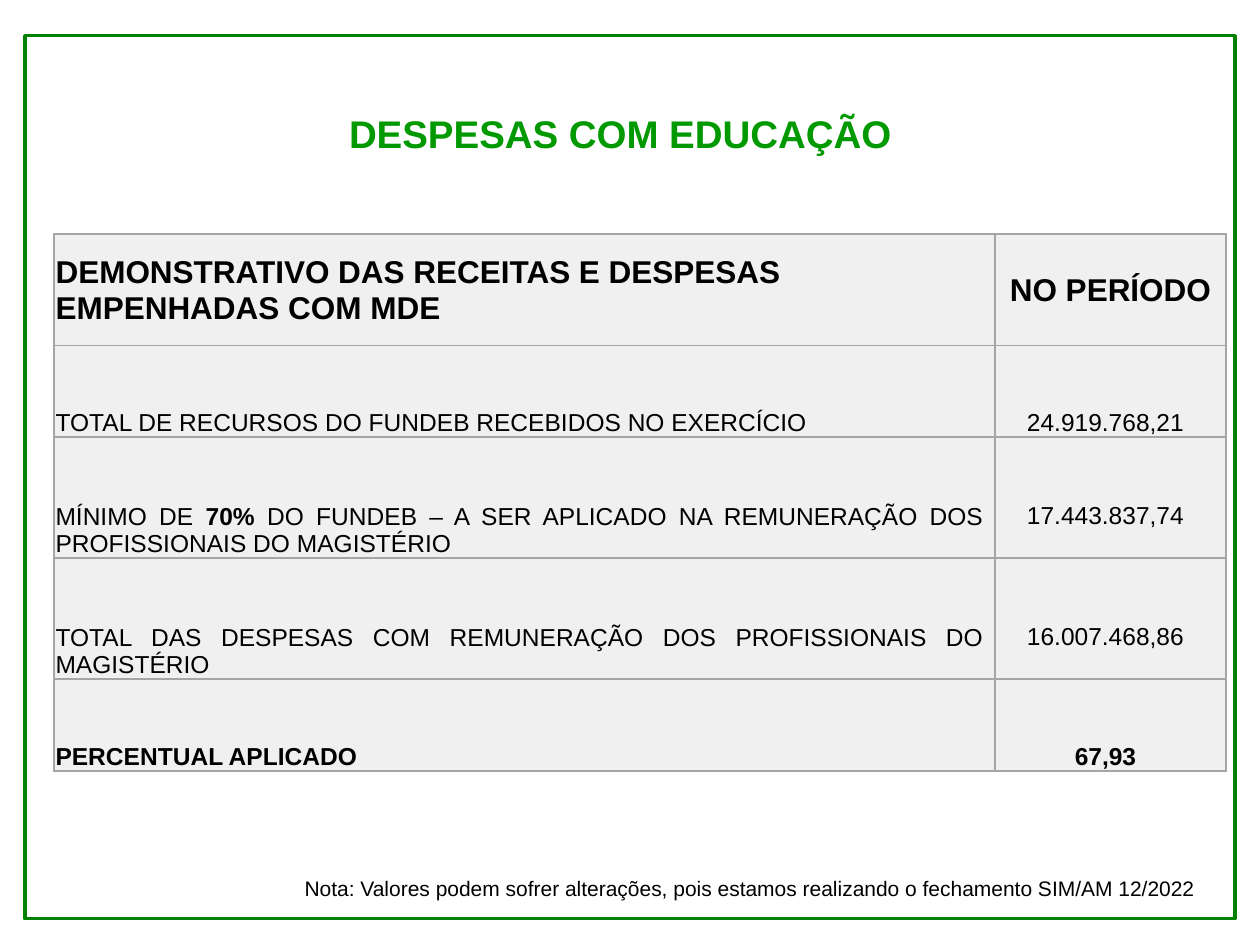
from dataclasses import dataclass

from lxml import etree
from pptx import Presentation
from pptx.dml.color import RGBColor
from pptx.enum.shapes import MSO_SHAPE
from pptx.enum.text import MSO_ANCHOR, MSO_AUTO_SIZE, PP_ALIGN
from pptx.oxml.ns import qn
from pptx.util import Cm, Pt

LEFT, CENTER, JUSTIFY = PP_ALIGN.LEFT, PP_ALIGN.CENTER, PP_ALIGN.JUSTIFY
MIDDLE, BOTTOM = MSO_ANCHOR.MIDDLE, MSO_ANCHOR.BOTTOM
RECTANGLE = MSO_SHAPE.RECTANGLE
NO_AUTOFIT = MSO_AUTO_SIZE.NONE

FRAME_GREEN = RGBColor(0x00, 0x80, 0x00)
TITLE_GREEN = RGBColor(0x00, 0x99, 0x00)
BLACK = RGBColor(0x00, 0x00, 0x00)
CELL_GRAY = RGBColor(0xF0, 0xF0, 0xF0)
BORDER_GRAY = RGBColor(0xA5, 0xA5, 0xA5)

FONT = "Arial"
HEADER_SIZE, BODY_SIZE = 18, 14
COLUMN_WIDTHS = (Cm(18.97), Cm(4.65))
ONE_LINE = Cm(0.57)


@dataclass(frozen=True)
class Span:
    text: str
    bold: bool = False


@dataclass(frozen=True)
class Row:
    label: tuple[Span, ...]
    value: Span
    height: Cm
    value_lift: Cm = Cm(0)


HEADER = Row(
    (Span("DEMONSTRATIVO DAS RECEITAS E DESPESAS EMPENHADAS COM MDE", True),),
    Span("NO PERÍODO", True), Cm(2.24))

BODY = (
    Row((Span("TOTAL DE RECURSOS DO FUNDEB RECEBIDOS NO EXERCÍCIO"),),
        Span("24.919.768,21"), Cm(1.85)),
    Row((Span("MÍNIMO DE "), Span("70% ", True),
         Span("DO FUNDEB – A SER APLICADO NA REMUNERAÇÃO DOS "
              "PROFISSIONAIS DO MAGISTÉRIO")),
        Span("17.443.837,74"), Cm(2.44), ONE_LINE),
    Row((Span("TOTAL DAS DESPESAS COM REMUNERAÇÃO DOS PROFISSIONAIS "
              "DO MAGISTÉRIO"),),
        Span("16.007.468,86"), Cm(2.44), ONE_LINE),
    Row((Span("PERCENTUAL APLICADO", True),), Span("67,93", True), Cm(1.85)),
)


def set_attributes(target, values: dict) -> None:
    for name, value in values.items():
        setattr(target, name, value)


def write(text_frame, spans: tuple[Span, ...], size: int,
          color: RGBColor = BLACK, align=LEFT) -> None:
    paragraph = text_frame.paragraphs[0]
    paragraph.alignment = align
    for span in spans:
        run = paragraph.add_run()
        run.text = span.text
        set_attributes(run.font, {"name": FONT, "size": Pt(size), "bold": span.bold})
        run.font.color.rgb = color


def add_borders(cell) -> None:
    properties = cell._tc.get_or_add_tcPr()
    for side in ("a:lnL", "a:lnR", "a:lnT", "a:lnB"):
        line = etree.SubElement(properties, qn(side), w=str(Pt(1)))
        fill = etree.SubElement(line, qn("a:solidFill"))
        etree.SubElement(fill, qn("a:srgbClr"), val=str(BORDER_GRAY))


def fill_cell(cell, spans: tuple[Span, ...], size: int, align, cell_format: dict) -> None:
    add_borders(cell)
    cell.fill.solid()
    cell.fill.fore_color.rgb = CELL_GRAY
    set_attributes(cell, {"margin_left": Cm(0.03), "margin_top": Cm(0.03), **cell_format})
    write(cell.text_frame, spans, size, align=align)


def add_frame(slide) -> None:
    frame = slide.shapes.add_shape(RECTANGLE, Cm(0.5), Cm(0.72), Cm(24.4), Cm(17.8))
    frame.shadow.inherit = False
    frame.fill.background()
    frame.line.color.rgb = FRAME_GREEN
    frame.line.width = Pt(2)


def add_title(slide) -> None:
    title = slide.shapes.title
    set_attributes(title, {"left": Cm(2.31), "top": Cm(1.32),
                           "width": Cm(20.6), "height": Cm(1.96)})
    set_attributes(title.text_frame, {"vertical_anchor": BOTTOM, "word_wrap": True,
                                      "auto_size": NO_AUTOFIT})
    write(title.text_frame, (Span("DESPESAS COM EDUCAÇÃO ", True),), 22,
          TITLE_GREEN, CENTER)


def add_expenses_table(slide) -> None:
    rows = (HEADER, *BODY)
    table = slide.shapes.add_table(
        len(rows), len(COLUMN_WIDTHS), Cm(1.09), Cm(4.72),
        sum(COLUMN_WIDTHS), sum(row.height for row in rows)).table
    set_attributes(table, {"first_row": False, "horz_banding": False})
    for column, width in zip(table.columns, COLUMN_WIDTHS):
        column.width = width

    for index, row in enumerate(rows):
        table.rows[index].height = row.height
        is_header = row is HEADER
        size = HEADER_SIZE if is_header else BODY_SIZE
        cell_format = {"vertical_anchor": MIDDLE if is_header else BOTTOM,
                       "margin_right": Cm(0.03 if is_header else 0.23),
                       "margin_bottom": Cm(0)}
        fill_cell(table.cell(index, 0), row.label, size,
                  LEFT if is_header else JUSTIFY, cell_format)
        fill_cell(table.cell(index, 1), (row.value,), size, CENTER,
                  {**cell_format, "margin_bottom": row.value_lift})


def add_note(slide) -> None:
    note = slide.shapes.add_textbox(Cm(5.89), Cm(17.53), Cm(18.8), Cm(0.76))
    note.text_frame.word_wrap = True
    write(note.text_frame,
          (Span("Nota: Valores podem sofrer alterações, pois estamos realizando "
                "o fechamento SIM/AM 12/2022"),), 12)


def main() -> None:
    presentation = Presentation()
    set_attributes(presentation, {"slide_width": Cm(25.4), "slide_height": Cm(19.05)})
    title_only = presentation.slide_layouts[5]
    slide = presentation.slides.add_slide(title_only)
    add_frame(slide)
    add_title(slide)
    add_expenses_table(slide)
    add_note(slide)
    presentation.save("out.pptx")


if __name__ == "__main__":
    main()
